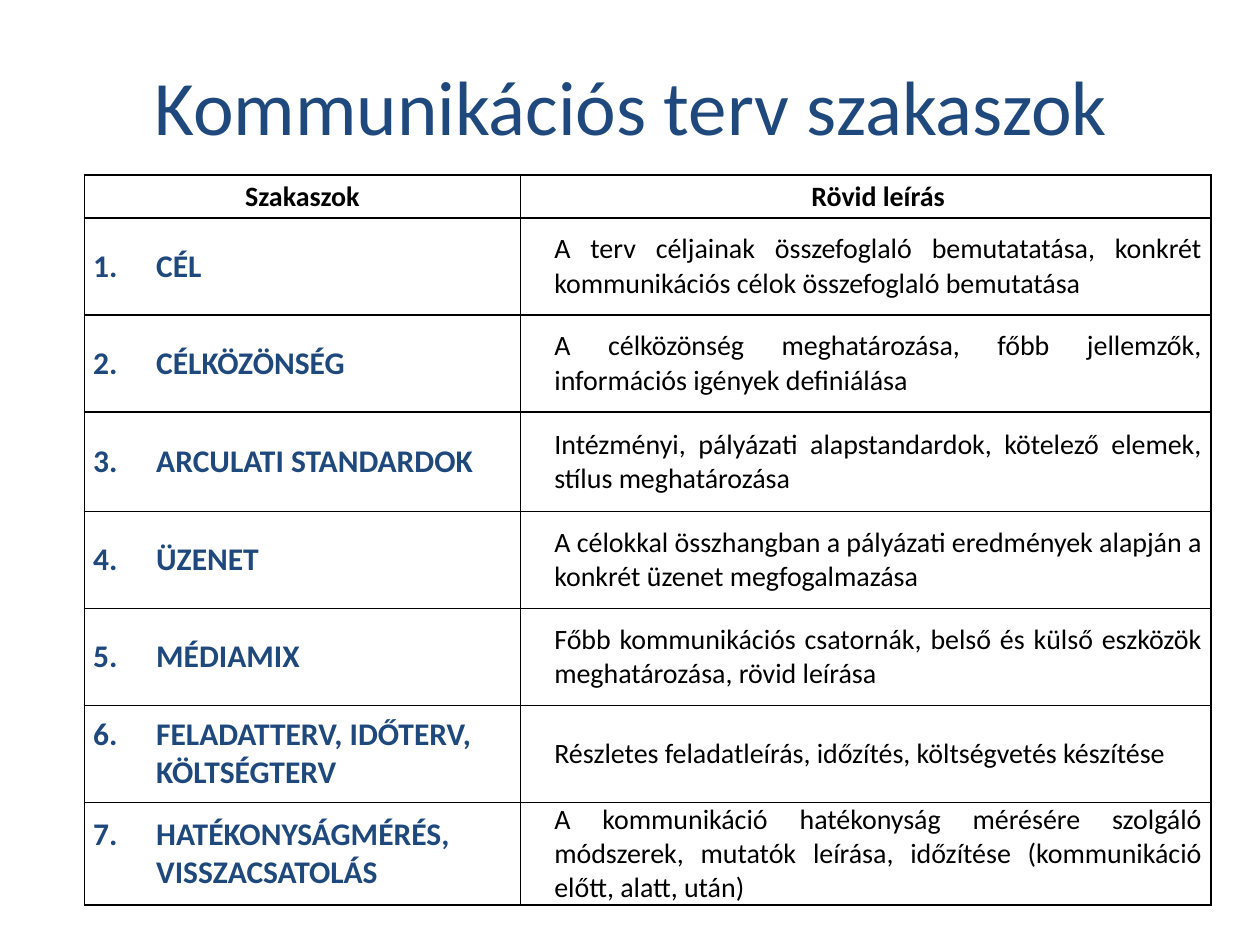
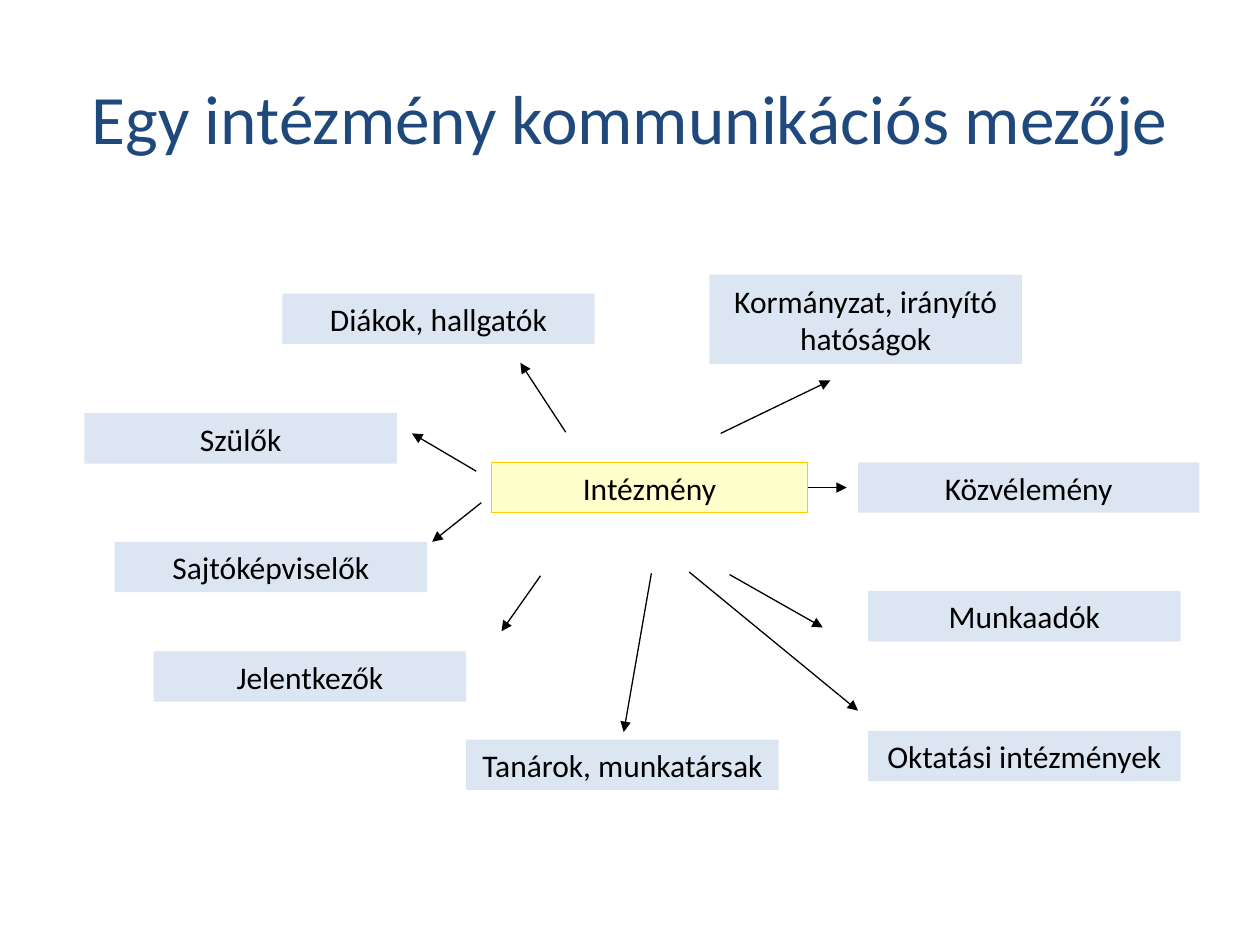
import pptx
import pptx.util
import pptx.dml.color
import pptx.enum.shapes
import pptx.enum.text
import pptx.oxml.ns
from lxml import etree

Inches = pptx.util.Inches
Pt = pptx.util.Pt
Align = pptx.enum.text.PP_ALIGN
Anchor = pptx.enum.text.MSO_ANCHOR

FONT = "Calibri"
NAVY, BLACK = "1F497D", "000000"
PALE_BLUE, PALE_YELLOW, GOLD = "DCE6F2", "FFFFCC", "FFCC00"

STAGES = [
    ("CÉL", "A terv céljainak összefoglaló bemutatatása, konkrét "
            "kommunikációs célok összefoglaló bemutatása"),
    ("CÉLKÖZÖNSÉG", "A célközönség meghatározása, főbb jellemzők, "
                    "információs igények definiálása"),
    ("ARCULATI STANDARDOK", "Intézményi, pályázati alapstandardok, kötelező elemek, "
                            "stílus meghatározása"),
    ("ÜZENET", "A célokkal összhangban a pályázati eredmények alapján "
               "a konkrét üzenet megfogalmazása"),
    ("MÉDIAMIX", "Főbb kommunikációs csatornák, belső és külső eszközök "
                 "meghatározása, rövid leírása"),
    ("FELADATTERV, IDŐTERV, KÖLTSÉGTERV",
     "Részletes feladatleírás, időzítés, költségvetés készítése"),
    ("HATÉKONYSÁGMÉRÉS, VISSZACSATOLÁS",
     "A kommunikáció hatékonyság mérésére szolgáló módszerek, mutatók leírása, "
     "időzítése (kommunikáció előtt, alatt, után)"),
]

# Label, left, top, width, height
AUDIENCES = [
    ("Diákok, hallgatók", 2.24, 2.33, 2.48, 0.4),
    ("Kormányzat, irányító hatóságok", 5.63, 2.18, 2.48, 0.71),
    ("Szülők", 0.67, 3.28, 2.48, 0.4),
    ("Közvélemény", 6.81, 3.67, 2.71, 0.4),
    ("Sajtóképviselők", 0.91, 4.3, 2.48, 0.4),
    ("Munkaadók", 6.89, 4.69, 2.48, 0.4),
    ("Jelentkezők", 1.22, 5.17, 2.48, 0.4),
    ("Oktatási intézmények", 6.89, 5.8, 2.48, 0.4),
    ("Tanárok, munkatársak", 3.7, 5.87, 2.48, 0.4),
]

# Start x, start y, end x, end y
ARROWS = [
    (4.49, 3.43, 4.13, 2.88),
    (5.72, 3.44, 6.59, 3.02),
    (3.78, 3.74, 3.27, 3.44),
    (3.82, 3.99, 3.43, 4.3),
    (5.79, 4.56, 6.53, 4.98),
    (4.29, 4.57, 3.98, 5.01),
    (5.47, 4.54, 6.81, 5.64),
    (5.17, 4.55, 4.95, 5.81),
]


def color(hex_text):
    return pptx.dml.color.RGBColor.from_string(hex_text)


def add_xml(parent, tag, **attributes):
    return etree.SubElement(parent, pptx.oxml.ns.qn(tag), attributes)


class Builder:
    def __init__(self):
        self.deck = pptx.Presentation()
        self.deck.slide_width = Inches(10)
        self.deck.slide_height = Inches(7.5)
        self.page = None

    def start_page(self, title, left, top, size):
        self.page = self.deck.slides.add_slide(self.deck.slide_layouts[5])
        box = self.page.shapes.title
        box.left, box.top, box.width, box.height = map(Inches, (left, top, 9, 1.25))
        box.text_frame.vertical_anchor = Anchor.MIDDLE
        self.set_text(box.text_frame, title, size, NAVY)

    def set_text(self, frame, text, size, text_color=BLACK, bold=False,
                 align=Align.CENTER):
        para = frame.paragraphs[0]
        para.text = text
        para.alignment = align
        para.font.name = FONT
        para.font.size = Pt(size)
        para.font.bold = bold
        para.font.color.rgb = color(text_color)

    def table(self, left, top, widths, heights):
        table = self.page.shapes.add_table(
            len(heights), len(widths), Inches(left), Inches(top),
            Inches(sum(widths)), Inches(sum(heights))).table
        table.first_row = table.horz_banding = False
        for column, width in zip(table.columns, widths):
            column.width = Inches(width)
        for row, height in zip(table.rows, heights):
            row.height = Inches(height)
        return table

    def cell(self, cell, text, size, indent=0.0, number=None, **style):
        """Fill a bordered cell; a number turns its paragraph into a list item."""
        cell.margin_left = cell.margin_right = Inches(0.07)
        cell.margin_top = cell.margin_bottom = 0
        cell.vertical_anchor = Anchor.MIDDLE
        properties = cell._tc.get_or_add_tcPr()
        for side in ("a:lnL", "a:lnR", "a:lnT", "a:lnB"):
            border = add_xml(properties, side, w=str(Pt(1)))
            add_xml(add_xml(border, "a:solidFill"), "a:srgbClr", val=BLACK)
        cell.fill.background()

        para = cell.text_frame.paragraphs[0]
        para.space_before = Pt(6)
        layout = para._p.get_or_add_pPr()
        layout.set("marL", str(Inches(indent)))
        layout.set("indent", str(-Inches(indent) if number else 0))
        if number:
            add_xml(layout, "a:buFont", typeface="+mj-lt")
            add_xml(layout, "a:buAutoNum", type="arabicPeriod", startAt=str(number))
        self.set_text(cell.text_frame, text, size, **style)

    def box(self, text, left, top, width, height, fill=PALE_BLUE, outline=None):
        box = self.page.shapes.add_shape(
            pptx.enum.shapes.MSO_SHAPE.RECTANGLE,
            *map(Inches, (left, top, width, height)))
        box.shadow.inherit = False
        box.fill.solid()
        box.fill.fore_color.rgb = color(fill)
        if outline:
            box.line.color.rgb = color(outline)
            box.line.width = Pt(0.75)
        else:
            box.line.fill.background()
        box.text_frame.word_wrap = True
        self.set_text(box.text_frame, text, 18)
        return box

    def arrow(self, *ends):
        arrow = self.page.shapes.add_connector(
            pptx.enum.shapes.MSO_CONNECTOR.STRAIGHT, *map(Inches, ends))
        arrow.line.color.rgb = color(BLACK)
        arrow.line.width = Pt(0.75)
        add_xml(arrow.line._get_or_add_ln(), "a:tailEnd", type="triangle")
        add_xml(arrow._element.spPr, "a:effectLst")
        return arrow


def add_stages_page(builder):
    builder.start_page("Kommunikációs terv szakaszok", 0.51, 0.21, 44)
    heights = [0.34, 0.77, 0.77, 0.79, 0.77, 0.77, 0.77, 0.77]
    table = builder.table(0.67, 1.39, [3.46, 5.48], heights)
    builder.cell(table.cell(0, 0), "Szakaszok", 16, bold=True)
    builder.cell(table.cell(0, 1), "Rövid leírás", 16, indent=0.2, bold=True)
    for number, (stage, description) in enumerate(STAGES, start=1):
        builder.cell(table.cell(number, 0), stage, 18, indent=0.5, number=number,
                     text_color=NAVY, bold=True, align=Align.LEFT)
        builder.cell(table.cell(number, 1), description, 16, indent=0.2,
                     align=Align.JUSTIFY)


def add_audiences_page(builder):
    builder.start_page("Egy intézmény kommunikációs mezője", 0.5, 0.3, 39.6)
    institution = builder.box("Intézmény", 3.9, 3.67, 2.51, 0.4, PALE_YELLOW, GOLD)
    for audience in AUDIENCES:
        builder.box(*audience)
    for ends in ARROWS:
        builder.arrow(*ends)
    public_arrow = builder.arrow(6.41, 3.87, 6.72, 3.87)
    public_arrow.begin_connect(institution, 3)


def main():
    builder = Builder()
    add_stages_page(builder)
    add_audiences_page(builder)
    builder.deck.save("out.pptx")


if __name__ == "__main__":
    main()
